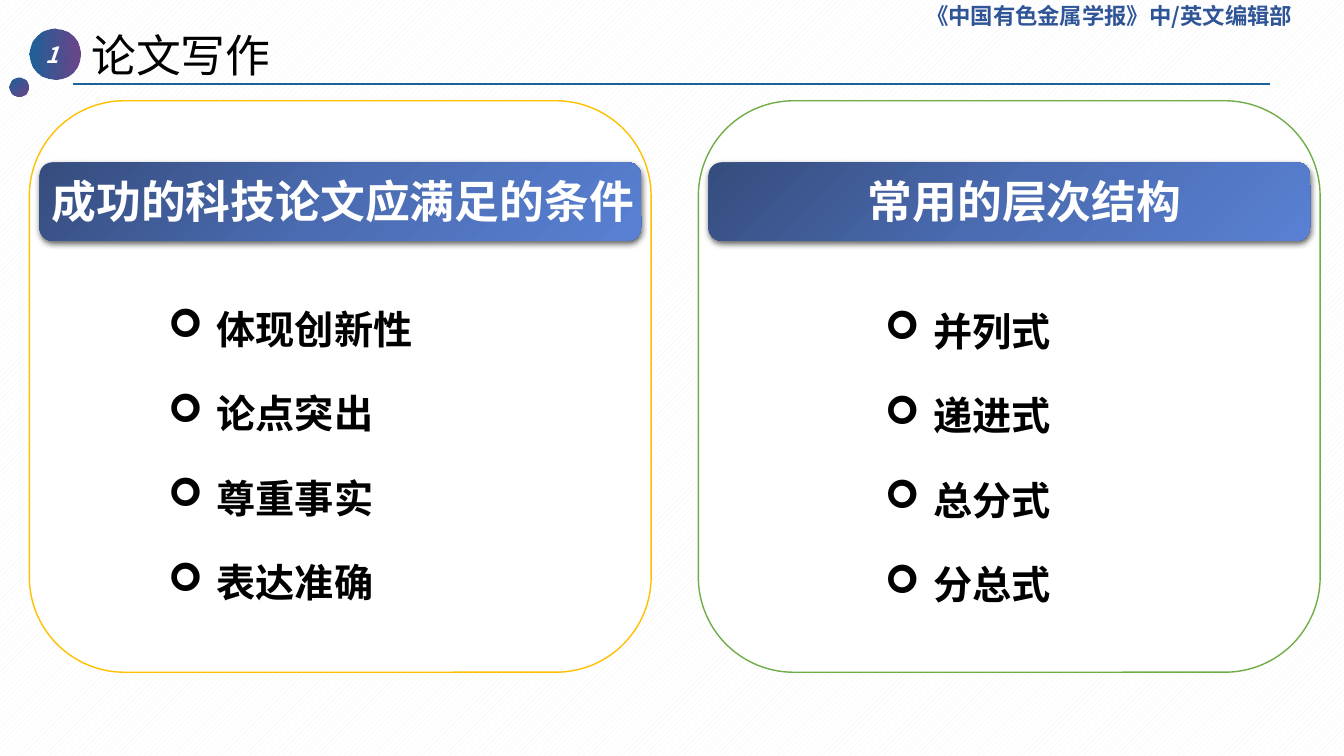
from lxml import etree
from pptx import Presentation
from pptx import util as u
from pptx.dml.color import RGBColor
from pptx.enum import dml, shapes, text
from pptx.oxml.ns import qn

HEADER = "《中国有色金属学报》中/英文编辑部"
TITLE = "论文写作"
NUMBER = "1"
PANELS = [
    {"left": 17.6, "line": "green", "caption": "常用的层次结构", "caption_shift": 0.39,
     "list_at": (22.3, 7.14), "items": ["并列式", "递进式", "总分式", "分总式"]},
    {"left": 0.74, "line": "gold", "caption": "成功的科技论文应满足的条件", "caption_shift": 0.07,
     "list_at": (4.24, 7.09), "items": ["体现创新性", "论点突出", "尊重事实", "表达准确"]},
]
DISCS = [((0.74, 0.71, 1.3, 1.3), 0), ((0.25, 1.96, 0.48, 0.48), 50)]

THEME = {
    "font": "Noto Sans CJK SC",
    "black": "000000", "white": "FFFFFF", "hatch": "F2F2F2",
    "gold": "FFC000", "green": "70AD47", "rule": "1C6299", "header": "2F5597",
    "disc": [(0, "1C6299", 100), (100, "5C307D", 90)],
    "banner": [(0, "354C7D", 100), (50, "4B6CB2", 100), (100, "5980D3", 100)],
    "heading_size": 32, "item_size": 28, "small_size": 16,
}
LINE_RATIO = 1.2
ITEM_RATIO = 1.8
ITEM_GAP = 10
HANG = 1.22


def colour(name):
    return RGBColor.from_string(THEME[name])


def add_child(parent, tag, **attributes):
    child = etree.SubElement(parent, qn(tag))
    for key, value in attributes.items():
        child.set(key, str(value))
    return child


def add_shape(page, kind, place):
    shape = page.shapes.add_shape(kind, *map(u.Cm, place))
    shape.shadow.inherit = False
    shape.line.fill.background()
    return shape


def fill_gradient(shape, stops, angle):
    shape.fill.gradient()
    shape.fill.gradient_angle = -angle % 360
    stop_list = shape._element.spPr.find(qn("a:gradFill")).find(qn("a:gsLst"))
    for old in list(stop_list):
        stop_list.remove(old)
    for position, value, opacity in stops:
        stop = add_child(stop_list, "a:gs", pos=position * 1000)
        tint = add_child(stop, "a:srgbClr", val=value)
        add_child(tint, "a:alpha", val=opacity * 1000)


def add_shadow(shape):
    effects = shape._element.spPr.find(qn("a:effectLst"))
    shadow = add_child(effects, "a:outerShdw", blurRad=u.Pt(4.5), dist=u.Pt(1.5),
                       dir=5400000, algn="t", rotWithShape=0)
    tint = add_child(shadow, "a:srgbClr", val=THEME["black"])
    add_child(tint, "a:alpha", val=63000)


def add_text(page, place, lines, size, ink, bold=True, italic=False, centred=False, bullet=False):
    box = page.shapes.add_textbox(*map(u.Cm, place))
    frame = box.text_frame
    frame.word_wrap = True
    frame.margin_left = frame.margin_right = frame.margin_top = frame.margin_bottom = 0
    for index, line in enumerate(lines):
        para = frame.add_paragraph() if index else frame.paragraphs[0]
        para.alignment = text.PP_ALIGN.CENTER if centred else text.PP_ALIGN.LEFT
        para.line_spacing = u.Pt(THEME[size] * (ITEM_RATIO if bullet else LINE_RATIO))
        if index:
            para.space_before = u.Pt(ITEM_GAP)
        if bullet:
            properties = para._p.get_or_add_pPr()
            properties.set("marL", str(u.Cm(HANG)))
            properties.set("indent", str(-u.Cm(HANG)))
            add_child(properties, "a:buFont", typeface="Wingdings")
            add_child(properties, "a:buChar", char="➢")
        span = para.add_run()
        span.text = line
        span.font.name = THEME["font"]
        span.font.size = u.Pt(THEME[size])
        span.font.bold = bold
        span.font.italic = italic
        span.font.color.rgb = colour(ink)
        add_child(span._r.get_or_add_rPr(), "a:ea", typeface=THEME["font"])


def add_panel(page, panel):
    frame = add_shape(page, shapes.MSO_SHAPE.ROUNDED_RECTANGLE, (panel["left"], 2.54, 15.67, 14.4))
    frame.fill.solid()
    frame.fill.fore_color.rgb = colour("white")
    frame.line.color.rgb = colour(panel["line"])
    frame.line.width = u.Pt(1)

    banner_left = panel["left"] + (15.67 - 15.16) / 2
    banner = add_shape(page, shapes.MSO_SHAPE.ROUNDED_RECTANGLE, (banner_left, 4.09, 15.16, 1.98))
    fill_gradient(banner, THEME["banner"], 45)
    add_shadow(banner)
    add_text(page, (banner_left + panel["caption_shift"], 4.39, 15.16, 1.35),
             [panel["caption"]], "heading_size", "white", centred=True)
    add_text(page, (*panel["list_at"], 11, 8.5), panel["items"], "item_size", "black", bullet=True)


def add_heading(page):
    add_text(page, (2.3, 0.71, 9, 1.35), [TITLE], "heading_size", "black", bold=False)
    rule = page.shapes.add_connector(shapes.MSO_CONNECTOR.STRAIGHT,
                                     u.Cm(1.83), u.Cm(2.11), u.Cm(32), u.Cm(2.11))
    rule.line.color.rgb = colour("rule")
    rule.line.width = u.Pt(1.75)
    add_child(rule._element.spPr, "a:effectLst")
    for place, angle in DISCS:
        disc = add_shape(page, shapes.MSO_SHAPE.OVAL, place)
        fill_gradient(disc, THEME["disc"], angle)
    add_text(page, (0.38, 1.04, 1.88, 0.68), [NUMBER], "small_size", "white",
             italic=True, centred=True)
    add_text(page, (23.34, 0.05, 10.4, 0.68), [HEADER], "small_size", "header")


def main():
    deck = Presentation()
    deck.slide_width, deck.slide_height = u.Cm(33.87), u.Cm(19.05)
    page = deck.slides.add_slide(deck.slide_layouts[6])
    backdrop = page.background.fill
    backdrop.patterned()
    backdrop.pattern = dml.MSO_PATTERN.WIDE_UPWARD_DIAGONAL
    backdrop.fore_color.rgb = colour("hatch")
    backdrop.back_color.rgb = colour("white")
    for panel in PANELS:
        add_panel(page, panel)
    add_heading(page)
    deck.save("out.pptx")


if __name__ == "__main__":
    main()
